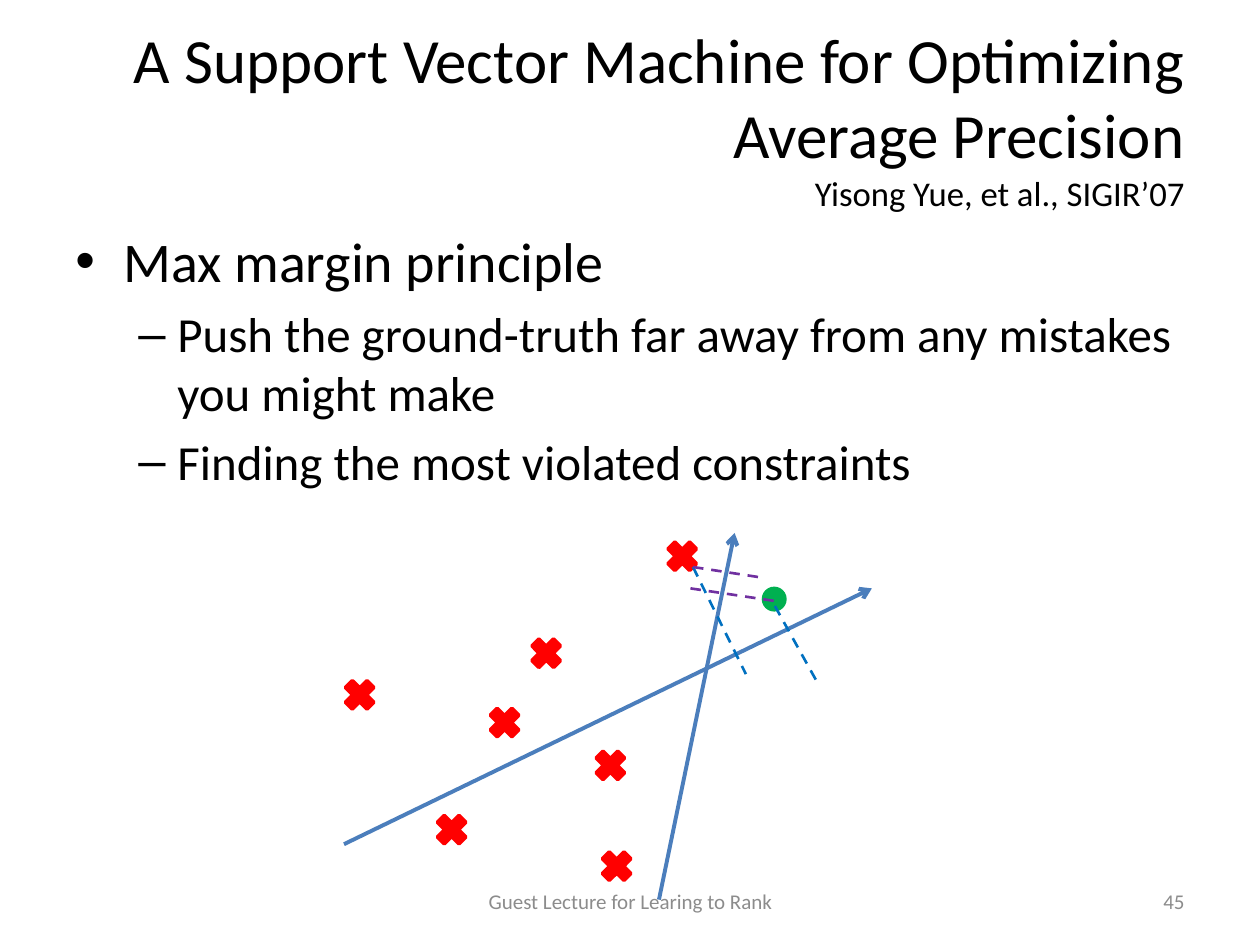
from dataclasses import dataclass

import pptx
import pptx.dml.color
import pptx.enum.dml
import pptx.enum.shapes
import pptx.enum.text
import pptx.oxml
import pptx.oxml.ns
import pptx.util

EMU_PER_PX = 9144  # 100 px to the inch
FONT = "Calibri"
COLORS = {
    "text": "000000",
    "footer": "8C8C8C",
    "mistake": "FF0000",
    "truth": "00B050",
    "direction": "4B7EBC",
    "blue margin": "0070C0",
    "purple margin": "7030A0",
}
ALIGN = pptx.enum.text.PP_ALIGN
ANCHOR = pptx.enum.text.MSO_ANCHOR
SHAPE = pptx.enum.shapes.MSO_SHAPE


@dataclass(frozen=True)
class Bullet:
    text: str
    level: int


@dataclass(frozen=True)
class BulletStyle:
    char: str
    size: int
    margin: int
    hanging: int


@dataclass(frozen=True)
class Marker:
    left: int
    top: int
    size: int
    kind: int
    color: str


@dataclass(frozen=True)
class Line:
    start: tuple[int, int]
    end: tuple[int, int]
    color: str
    is_arrow: bool = False


BULLET_STYLES = [BulletStyle("•", 32, 38, 38), BulletStyle("–", 28, 81, 31)]
BULLETS = [
    Bullet("Max margin principle", 0),
    Bullet("Push the ground-truth far away from any mistakes you might make", 1),
    Bullet("Finding the most violated constraints", 1),
]
MISTAKE_POSITIONS = [
    (417, 502), (468, 591), (384, 557), (342, 642),
    (269, 535), (473, 671), (525, 425),
]
MARKERS = [
    Marker(left, top, 33, SHAPE.MATH_MULTIPLY, "mistake")
    for left, top in MISTAKE_POSITIONS
] + [Marker(606, 467, 17, SHAPE.OVAL, "truth")]
STEEP_DIRECTION = Line((523, 714), (583, 423), "direction", True)
FLAT_DIRECTION = Line((273, 670), (692, 467), "direction", True)
MARGINS = [
    Line((550, 450), (592, 535), "blue margin"),
    Line((615, 481), (650, 544), "blue margin"),
    Line((550, 450), (602, 458), "purple margin"),
    Line((548, 467), (615, 477), "purple margin"),
]


def px(length: int) -> pptx.util.Emu:
    return pptx.util.Emu(length * EMU_PER_PX)


def rgb(name: str) -> pptx.dml.color.RGBColor:
    return pptx.dml.color.RGBColor.from_string(COLORS[name])


def add_element(parent, tag: str, attributes: str = "") -> None:
    namespace = pptx.oxml.ns.nsdecls("a")
    parent.append(pptx.oxml.parse_xml(f"<a:{tag} {namespace} {attributes}/>"))


def add_text_frame(slide, box: tuple[int, int, int, int], anchor):
    frame = slide.shapes.add_textbox(*map(px, box)).text_frame
    frame.word_wrap = True
    frame.vertical_anchor = anchor
    return frame


def set_font(font, size: float, color: str) -> None:
    font.name = FONT
    font.size = pptx.util.Pt(size)
    font.color.rgb = rgb(color)


def add_title(slide) -> None:
    frame = add_text_frame(slide, (50, 30, 900, 125), ANCHOR.MIDDLE)
    paragraph = frame.paragraphs[0]
    paragraph.alignment = ALIGN.RIGHT
    title = paragraph.add_run()
    title.text = "A Support Vector Machine for Optimizing Average Precision"
    set_font(title.font, 36, "text")
    paragraph.add_line_break()
    authors = paragraph.add_run()
    authors.text = "Yisong Yue, et al., SIGIR’07"
    set_font(authors.font, 19.8, "text")


def add_bullets(slide, bullets: list[Bullet]) -> None:
    frame = add_text_frame(slide, (50, 175, 900, 495), ANCHOR.TOP)
    for index, bullet in enumerate(bullets):
        style = BULLET_STYLES[bullet.level]
        paragraph = frame.add_paragraph() if index else frame.paragraphs[0]
        paragraph.text = bullet.text
        paragraph.level = bullet.level
        paragraph.space_before = pptx.util.Pt(style.size * 0.2)
        set_font(paragraph.font, style.size, "text")
        properties = paragraph._p.get_or_add_pPr()
        properties.set("marL", str(px(style.margin)))
        properties.set("indent", str(-px(style.hanging)))
        bullet_xml = properties.find(pptx.oxml.ns.qn("a:defRPr"))
        properties.remove(bullet_xml)
        add_element(properties, "buFont", 'typeface="Arial"')
        add_element(properties, "buChar", f'char="{style.char}"')
        properties.append(bullet_xml)


def add_marker(slide, marker: Marker) -> None:
    shape = slide.shapes.add_shape(
        marker.kind, px(marker.left), px(marker.top), px(marker.size), px(marker.size)
    )
    shape.shadow.inherit = False
    shape.fill.solid()
    shape.fill.fore_color.rgb = rgb(marker.color)
    shape.line.color.rgb = rgb(marker.color)
    shape.line.width = pptx.util.Pt(2)


def add_line(slide, line: Line) -> None:
    connector = slide.shapes.add_connector(
        pptx.enum.shapes.MSO_CONNECTOR.STRAIGHT, *map(px, line.start + line.end)
    )
    connector.line.color.rgb = rgb(line.color)
    if line.is_arrow:
        connector.line.width = pptx.util.Pt(2.25)
        add_element(connector.line._get_or_add_ln(), "tailEnd", 'type="arrow"')
    else:
        connector.line.width = pptx.util.Pt(1.5)
        connector.line.dash_style = pptx.enum.dml.MSO_LINE.DASH
    add_element(connector._element.spPr, "effectLst")


def add_footer(slide, text: str, left: int, width: int, alignment) -> None:
    frame = add_text_frame(slide, (left, 695, width, 40), ANCHOR.MIDDLE)
    paragraph = frame.paragraphs[0]
    paragraph.text = text
    paragraph.alignment = alignment
    set_font(paragraph.font, 12, "footer")


def main() -> None:
    presentation = pptx.Presentation()
    presentation.slide_width = px(1000)
    presentation.slide_height = px(750)
    slide = presentation.slides.add_slide(presentation.slide_layouts[6])

    # Title and bullets
    add_bullets(slide, BULLETS)
    add_title(slide)

    # Diagram of mistakes, ground truth and candidate directions
    add_line(slide, STEEP_DIRECTION)
    for marker in MARKERS:
        add_marker(slide, marker)
    for line in [FLAT_DIRECTION, *MARGINS]:
        add_line(slide, line)

    # Footer and slide number
    add_footer(slide, "Guest Lecture for Learing to Rank", 342, 317, ALIGN.CENTER)
    add_footer(slide, "45", 717, 233, ALIGN.RIGHT)

    presentation.save("out.pptx")


if __name__ == "__main__":
    main()
